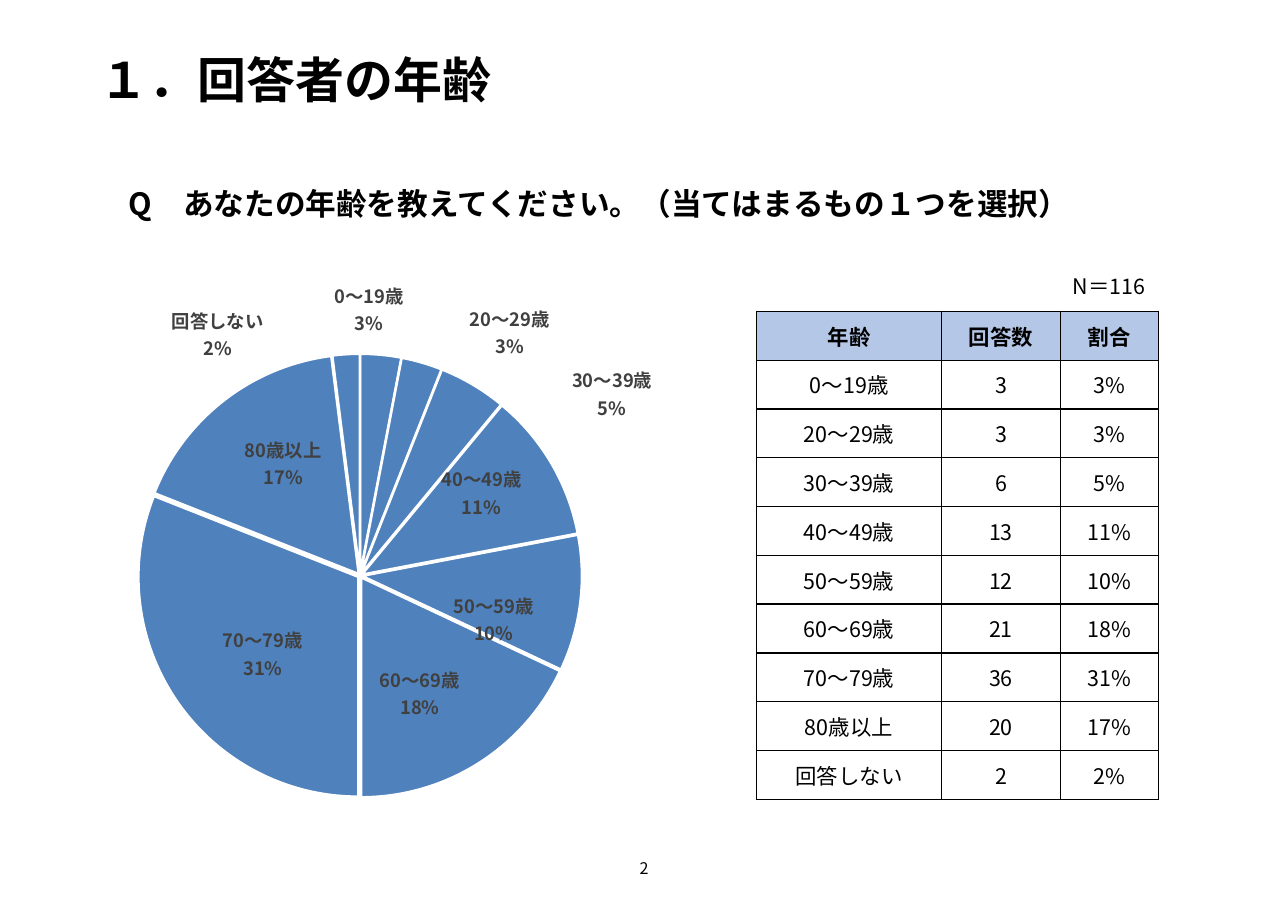
"""Build a survey slide with the respondents' ages as a pie chart and a table."""
from dataclasses import dataclass
from math import cos, pi, sin

from lxml import etree
from pptx import Presentation
from pptx.chart.data import CategoryChartData
from pptx.dml.color import RGBColor
from pptx.enum.chart import XL_CHART_TYPE
from pptx.enum.text import MSO_ANCHOR, MSO_AUTO_SIZE, PP_ALIGN
from pptx.oxml.ns import qn
from pptx.util import Pt

PIE = XL_CHART_TYPE.PIE
MIDDLE, TOP = MSO_ANCHOR.MIDDLE, MSO_ANCHOR.TOP
LEFT, CENTER = PP_ALIGN.LEFT, PP_ALIGN.CENTER
NO_AUTOFIT = MSO_AUTO_SIZE.NONE


@dataclass(frozen=True)
class Theme:
    """Colours, font and type sizes of the slide."""
    font: str = "Noto Sans CJK JP"
    black: str = "000000"
    white: str = "FFFFFF"
    gray: str = "404040"
    blue: str = "B4C7E7"
    title: float = 32
    question: float = 20
    table: float = 14
    label: float = 12
    page: float = 10.5


@dataclass(frozen=True)
class Age:
    """One age group with the centre and width of its pie label in points."""
    name: str
    count: int
    percent: int
    label_x: float
    label_y: float
    label_width: float


THEME = Theme()
AGES = [
    Age("0～19歳", 3, 3, 246.6, 202, 56),
    Age("20～29歳", 3, 3, 339, 217, 64),
    Age("30～39歳", 6, 5, 406, 257, 64),
    Age("40～49歳", 13, 11, 320.5, 322, 64),
    Age("50～59歳", 12, 10, 328.6, 404.4, 64),
    Age("60～69歳", 21, 18, 280.3, 453, 64),
    Age("70～79歳", 36, 31, 166, 427, 64),
    Age("80歳以上", 20, 17, 183.3, 302.5, 54),
    Age("回答しない", 2, 2, 142.4, 218.2, 60),
]
CHART_LEFT, CHART_TOP, CHART_WIDTH, CHART_HEIGHT = 30, 180, 460, 380
PIE_X, PIE_Y, PIE_RADIUS = 235.3, 376.3, 145
LABEL_GAP, LABEL_HEIGHT = 4.25, 36


def style_font(font, size, color=THEME.black, bold=False):
    """Apply size, colour, weight and the theme font for all scripts."""
    font.size, font.bold, font.name = Pt(size), bold, THEME.font
    font.color.rgb = RGBColor.from_string(color)
    etree.SubElement(font._element, qn("a:ea"), typeface=THEME.font)


def write_text(frame, text, size, bold=False, align=LEFT, anchor=MIDDLE):
    """Write one formatted paragraph into a text frame."""
    frame.text = text
    frame.word_wrap = True
    frame.auto_size = NO_AUTOFIT
    frame.vertical_anchor = anchor
    paragraph = frame.paragraphs[0]
    paragraph.alignment = align
    style_font(paragraph.font, size, bold=bold)
    return paragraph


def fill_placeholder(shape, box, text, size):
    """Move a placeholder and write an unbulleted heading into it."""
    shape.left, shape.top, shape.width, shape.height = map(Pt, box)
    paragraph = write_text(shape.text_frame, text, size, bold=True)
    paragraph.line_spacing = 0.9
    paragraph.space_before = Pt(0)
    properties = paragraph._p.get_or_add_pPr()
    properties.set("marL", "0")
    properties.set("indent", "0")
    bullet = etree.Element(qn("a:buNone"))
    properties.find(qn("a:defRPr")).addprevious(bullet)


def add_text(slide, box, text, size, **options):
    """Add a text box with one paragraph."""
    shape = slide.shapes.add_textbox(*map(Pt, box))
    write_text(shape.text_frame, text, size, **options)


def add_borders(cell):
    """Draw a thin black border around a table cell."""
    properties = cell._tc.get_or_add_tcPr()
    for position, side in enumerate(("lnL", "lnR", "lnT", "lnB")):
        line = etree.Element(qn(f"a:{side}"), w=str(Pt(1)))
        fill = etree.SubElement(line, qn("a:solidFill"))
        etree.SubElement(fill, qn("a:srgbClr"), val=THEME.black)
        properties.insert(position, line)


def add_age_table(slide):
    """Add the table of answers and shares per age group."""
    rows = [("年齢", "回答数", "割合")]
    rows += [(age.name, str(age.count), f"{age.percent}%") for age in AGES]
    widths = (121, 77.5, 64.3)
    frame = slide.shapes.add_table(len(rows), len(widths), Pt(494.4), Pt(203.5),
                                   Pt(sum(widths)), Pt(31.9 * len(rows)))
    table = frame.table
    for column, width in zip(table.columns, widths):
        column.width = Pt(width)
    for row_index, row in enumerate(rows):
        header = row_index == 0
        for column_index, text in enumerate(row):
            cell = table.cell(row_index, column_index)
            cell.text = text
            cell.vertical_anchor = MIDDLE
            cell.margin_left = cell.margin_right = 0
            cell.margin_top = cell.margin_bottom = 0
            cell.fill.solid()
            color = THEME.blue if header else THEME.white
            cell.fill.fore_color.rgb = RGBColor.from_string(color)
            paragraph = cell.text_frame.paragraphs[0]
            paragraph.alignment = CENTER
            style_font(paragraph.font, THEME.table, bold=header)
            add_borders(cell)


def make_layout(x, y, width=None, height=None):
    """Make a manual chart layout from fractions of the chart size."""
    layout = etree.Element(qn("c:layout"))
    manual = etree.SubElement(layout, qn("c:manualLayout"))
    values = {"x": x, "y": y}
    if width is not None:
        values = {"layoutTarget": "inner", "xMode": "edge", "yMode": "edge",
                  **values, "w": width, "h": height}
    for name, value in values.items():
        text = value if isinstance(value, str) else f"{value:.4f}"
        etree.SubElement(manual, qn(f"c:{name}"), val=text)
    return layout


def label_offset(age, angle):
    """Return the shift of a label from its place outside the slice."""
    across, down = sin(angle), -cos(angle)
    reach = PIE_RADIUS + LABEL_GAP
    side_x = (across > 0.087) - (across < -0.087)
    side_y = (down > 0.087) - (down < -0.087)
    start_x = PIE_X + reach * across + side_x * age.label_width / 2
    start_y = PIE_Y + reach * down + side_y * LABEL_HEIGHT / 2
    return ((age.label_x - start_x) / CHART_WIDTH,
            (age.label_y - start_y) / CHART_HEIGHT)


def place_label(series, index, angle):
    """Show name and percentage of a slice at the place of its label."""
    style_font(series.points[index].data_label.font, THEME.label, THEME.gray, True)
    label = series.data_labels._element.findall(qn("c:dLbl"))[index]
    label.find(qn("c:idx")).addnext(make_layout(*label_offset(AGES[index], angle)))
    for name, shown in (("Val", "0"), ("CatName", "1"), ("Percent", "1")):
        label.find(qn(f"c:show{name}")).set("val", shown)
    etree.SubElement(label, qn("c:separator")).text = "\n"


def add_age_pie(slide):
    """Add the pie chart of age groups."""
    data = CategoryChartData()
    data.categories = [age.name for age in AGES]
    data.add_series("割合", [age.percent for age in AGES])
    box = map(Pt, (CHART_LEFT, CHART_TOP, CHART_WIDTH, CHART_HEIGHT))
    chart = slide.shapes.add_chart(PIE, *box, data).chart
    chart.has_legend = chart.has_title = False
    style_font(chart.font, THEME.label)
    plot_area = chart._chartSpace.chart.plotArea
    for layout in plot_area.findall(qn("c:layout")):
        plot_area.remove(layout)
    plot_area.insert(0, make_layout(
        (PIE_X - PIE_RADIUS - CHART_LEFT) / CHART_WIDTH,
        (PIE_Y - PIE_RADIUS - CHART_TOP) / CHART_HEIGHT,
        2 * PIE_RADIUS / CHART_WIDTH, 2 * PIE_RADIUS / CHART_HEIGHT))
    plot = chart.plots[0]
    plot.vary_by_categories = False
    series = plot.series[0]
    series.format.fill.solid()
    series.format.fill.fore_color.rgb = RGBColor.from_string(THEME.blue)
    series.format.line.color.rgb = RGBColor.from_string(THEME.white)
    series.format.line.width = Pt(1.5)
    explosion = etree.Element(qn("c:explosion"), val="1")
    series._element.find(qn("c:spPr")).addnext(explosion)
    total, passed = sum(age.percent for age in AGES), 0
    for index, age in enumerate(AGES):
        place_label(series, index, 2 * pi * (passed + age.percent / 2) / total)
        passed += age.percent


def main():
    """Build and save the slide."""
    presentation = Presentation()
    presentation.slide_width, presentation.slide_height = Pt(841.7), Pt(595.4)
    slide = presentation.slides.add_slide(presentation.slide_layouts[1])
    title, question = slide.placeholders
    fill_placeholder(title, (57.6, 26, 726.5, 56), "１．回答者の年齢", THEME.title)
    fill_placeholder(question, (77, 106.5, 726.5, 56),
                     "Q　あなたの年齢を教えてください。（当てはまるもの１つを選択）", THEME.question)
    add_age_pie(slide)
    add_age_table(slide)
    add_text(slide, (694, 175, 76.3, 24.5), "N＝116", THEME.table, anchor=TOP)
    add_text(slide, (278.6, 551.5, 284.4, 31.7), "2", THEME.page, align=CENTER)
    presentation.save("out.pptx")


if __name__ == "__main__":
    main()
